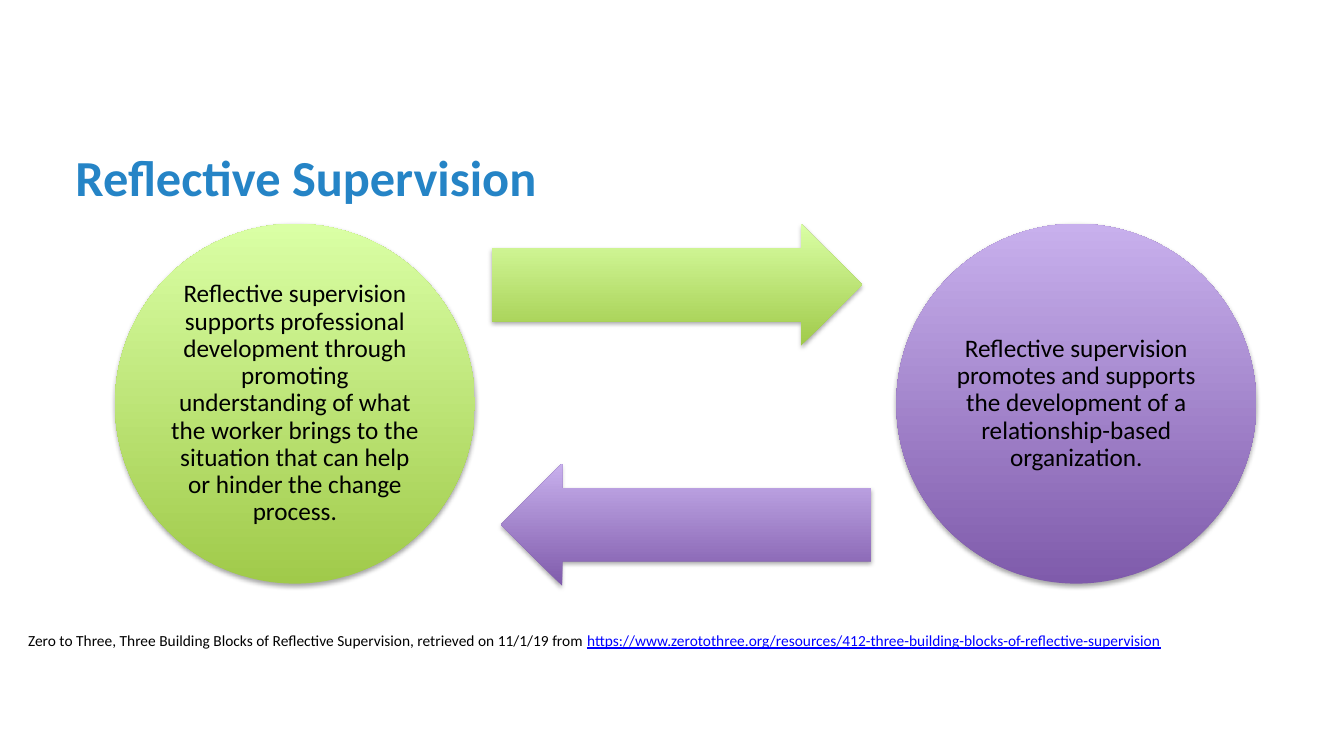
import pptx
import pptx.dml.color
import pptx.enum.shapes
import pptx.enum.text
import pptx.oxml
import pptx.oxml.ns
import pptx.util

Inches = pptx.util.Inches
Pt = pptx.util.Pt
RGBColor = pptx.dml.color.RGBColor
Shape = pptx.enum.shapes.MSO_SHAPE
MIDDLE = pptx.enum.text.MSO_ANCHOR.MIDDLE

COLORS = {
    "title": "2584C6",
    "text": "000000",
    "link": "0000FF",
    "green_dark": "A0CA4A",
    "green_light": "DAFFA5",
    "purple_dark": "7F5BAB",
    "purple_light": "C8B0ED",
}
FONT = "Calibri"
SHADOW = (
    f'<a:outerShdw {pptx.oxml.ns.nsdecls("a")} blurRad="40000" dist="23000" '
    'dir="5400000" rotWithShape="0"><a:srgbClr val="000000">'
    '<a:alpha val="35000"/></a:srgbClr></a:outerShdw>'
)
CIRCLE_SIZE = 3.57
ARROW_WIDTH, ARROW_HEIGHT = 3.67, 1.21


def add_gradient_shape(kind, left, top, width, height, hue):
    """Add a borderless shape, dark at the bottom and light at the top, with a soft shadow."""
    shape = slide.shapes.add_shape(kind, Inches(left), Inches(top), Inches(width), Inches(height))
    shape.fill.gradient()
    shape.fill.gradient_angle = 90
    for stop, shade in zip(shape.fill.gradient_stops, ("dark", "light")):
        stop.color.rgb = RGBColor.from_string(COLORS[f"{hue}_{shade}"])
    for stop, position in zip(shape.fill.gradient_stops, (0, 1)):
        stop.position = position
    shape.line.fill.background()
    shape.shadow.inherit = False
    effects = shape._element.spPr.find(pptx.oxml.ns.qn("a:effectLst"))
    effects.append(pptx.oxml.parse_xml(SHADOW))
    return shape


def style_font(font, size, color):
    font.name = FONT
    font.size = Pt(size)
    font.color.rgb = RGBColor.from_string(COLORS[color])


presentation = pptx.Presentation()
presentation.slide_width = Inches(13.33)
presentation.slide_height = Inches(7.5)
slide = presentation.slides.add_slide(presentation.slide_layouts[6])

# Title
title = slide.shapes.add_textbox(Inches(0.65), Inches(1.5), Inches(12), Inches(0.49))
title.text_frame.word_wrap = True
title.text_frame.vertical_anchor = MIDDLE
paragraph = title.text_frame.paragraphs[0]
paragraph.text = "Reflective Supervision"
style_font(paragraph.font, 36, "title")
paragraph.font.bold = True

# Circles with their statements
statements = [
    (1.14, "green", "Reflective supervision supports professional development through promoting "
     "understanding of what the worker brings to the situation that can help or hinder the "
     "change process."),
    (8.89, "purple", "Reflective supervision promotes and supports the development of a "
     "relationship-based organization."),
]
for left, hue, statement in statements:
    circle = add_gradient_shape(Shape.OVAL, left, 2.22, CIRCLE_SIZE, CIRCLE_SIZE, hue)
    frame = circle.text_frame
    frame.word_wrap = True
    frame.vertical_anchor = MIDDLE
    frame.margin_left = frame.margin_right = Inches(0.03)
    frame.margin_top = frame.margin_bottom = Inches(0.03)
    paragraph = frame.paragraphs[0]
    paragraph.text = statement
    paragraph.alignment = pptx.enum.text.PP_ALIGN.CENTER
    paragraph.line_spacing = 0.9
    style_font(paragraph.font, 18, "text")

# Arrows between the circles
arrows = [
    (Shape.RIGHT_ARROW, 4.88, 2.22, "green"),
    (Shape.LEFT_ARROW, 4.97, 4.6, "purple"),
]
for kind, left, top, hue in arrows:
    arrow = add_gradient_shape(kind, left, top, ARROW_WIDTH, ARROW_HEIGHT, hue)
    arrow.adjustments[0] = 0.6
    arrow.adjustments[1] = 0.5

# Reference
reference = slide.shapes.add_textbox(Inches(0.18), Inches(6.21), Inches(13.25), Inches(0.29))
reference.text_frame.word_wrap = True
paragraph = reference.text_frame.paragraphs[0]
citation = paragraph.add_run()
citation.text = ("Zero to Three, Three Building Blocks of Reflective Supervision, "
                 "retrieved on 11/1/19 from ")
style_font(citation.font, 11, "text")
address = paragraph.add_run()
address.text = ("https://www.zerotothree.org/resources/"
                "412-three-building-blocks-of-reflective-supervision")
style_font(address.font, 11, "link")
address.font.underline = True

presentation.save("out.pptx")
